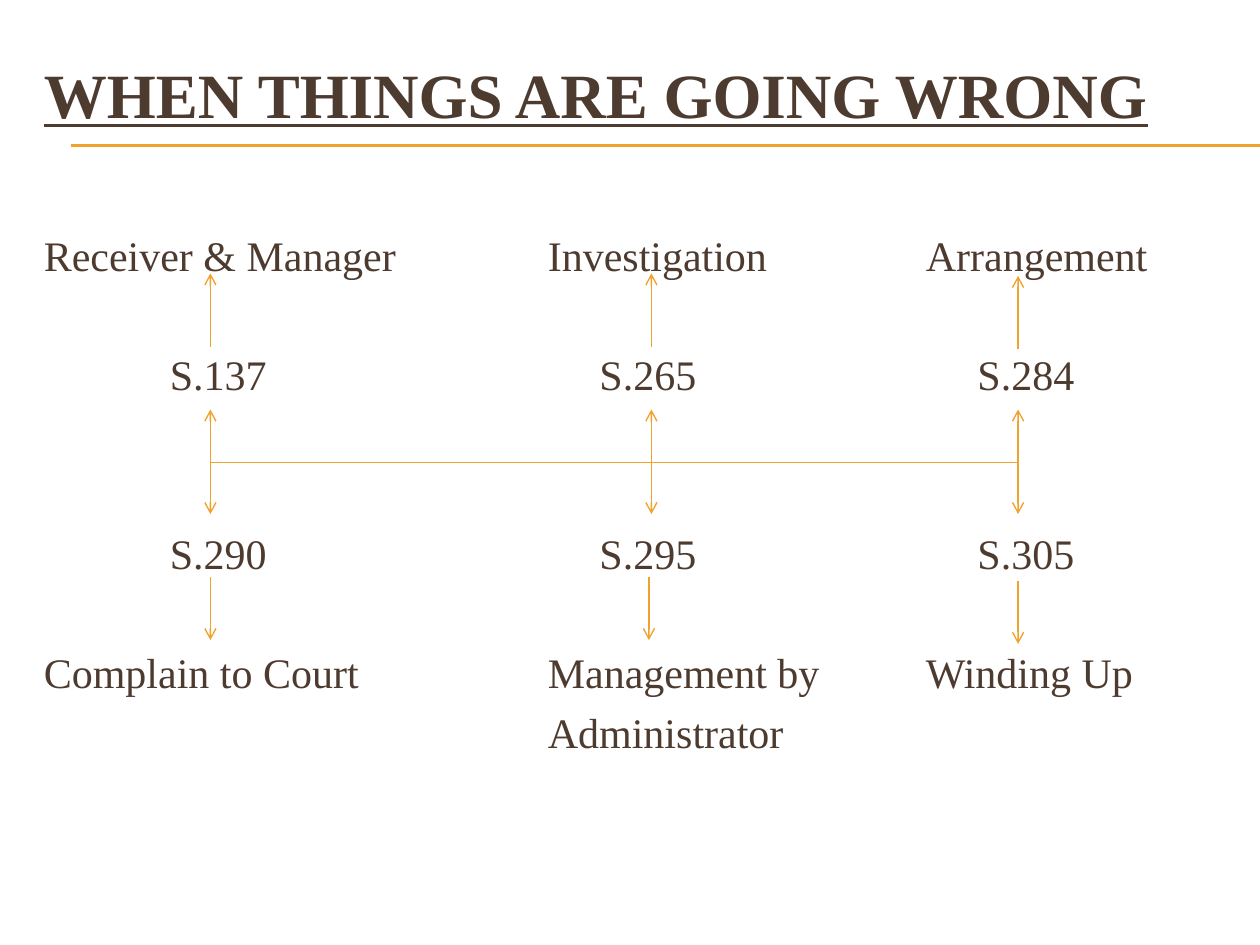
from lxml import etree
from pptx import Presentation, util as u
from pptx.dml.color import RGBColor
from pptx.enum import shapes as s
from pptx.oxml import ns

In = u.Inches
GOLD, BROWN = "F0A22E", "4E3B30"

deck = Presentation()
deck.slide_width, deck.slide_height = In(10), In(7.5)
page = deck.slides.add_slide(deck.slide_layouts[6])


def paint(item, tone):
    item.rgb = RGBColor.from_string(tone)


def draw(x1, y1, x2, y2, width=0.79, ends=()):
    """Add a gold line; ends lists headEnd and/or tailEnd for open arrows."""
    line = page.shapes.add_connector(
        s.MSO_CONNECTOR.STRAIGHT, In(x1), In(y1), In(x2), In(y2))
    line.line.fill.solid()
    paint(line.line.fill.fore_color, GOLD)
    line.line.width = u.Pt(width)
    props = line.line._get_or_add_ln()
    for end in ends:
        etree.SubElement(props, ns.qn("a:" + end), type="arrow")
    etree.SubElement(line._element.spPr, ns.qn("a:effectLst"))


# Double rule under the title
for y in (1.15, 1.16):
    draw(0.56, y, 10, y, 0.75)

# Text rows: words, size, space before, tab stops from the text edge
wide, mid = (4, 7), (1, 4.41, 7.41)
rows = [
    ("WHEN THINGS ARE GOING WRONG", 36, 0, ()),
    ("Receiver & Manager\tInvestigation\tArrangement", 24, 56, wide),
    ("\tS.137\tS.265\tS.284", 24, 39.2, mid),
    ("\tS.290\tS.295\tS.305", 24, 73.5, mid),
    ("Complain to Court\tManagement by\tWinding Up", 24, 39.2, wide),
    ("\tAdministrator", 24, 5.8, wide),
]
box = page.shapes.add_textbox(In(0.25), In(0.33), In(9.5), In(6.92))
frame = box.text_frame
frame.word_wrap = True
frame.margin_top = In(0.11)
for i, (words, size, gap, stops) in enumerate(rows):
    para = frame.paragraphs[0] if i == 0 else frame.add_paragraph()
    para.space_before = u.Pt(gap)
    if stops:
        tabs = etree.SubElement(para._p.get_or_add_pPr(), ns.qn("a:tabLst"))
        for stop in stops:
            etree.SubElement(tabs, ns.qn("a:tab"), pos=str(In(stop)), algn="l")
    run = para.add_run()
    run.text = words
    font = run.font
    font.name, font.size = "Times New Roman", u.Pt(size)
    font.bold = font.underline = i == 0
    paint(font.color, BROWN)

# Arrows: upper x, lower x, and the drop of the outer arrows
cols = [(1.67, 1.67, 0), (5.17, 5.15, 0), (8.08, 8.08, 0.02)]
for x, low, drop in cols:
    draw(x, 2.75 + drop, x, 2.17 + drop, ends=["tailEnd"])
    draw(x, 3.25, x, 4.08, ends=["headEnd", "tailEnd"])
    draw(low, 4.58 + 1.5 * drop, low, 5.08 + 1.5 * drop, ends=["tailEnd"])
draw(cols[0][0], 3.67, cols[-1][0], 3.67)

deck.save("out.pptx")
